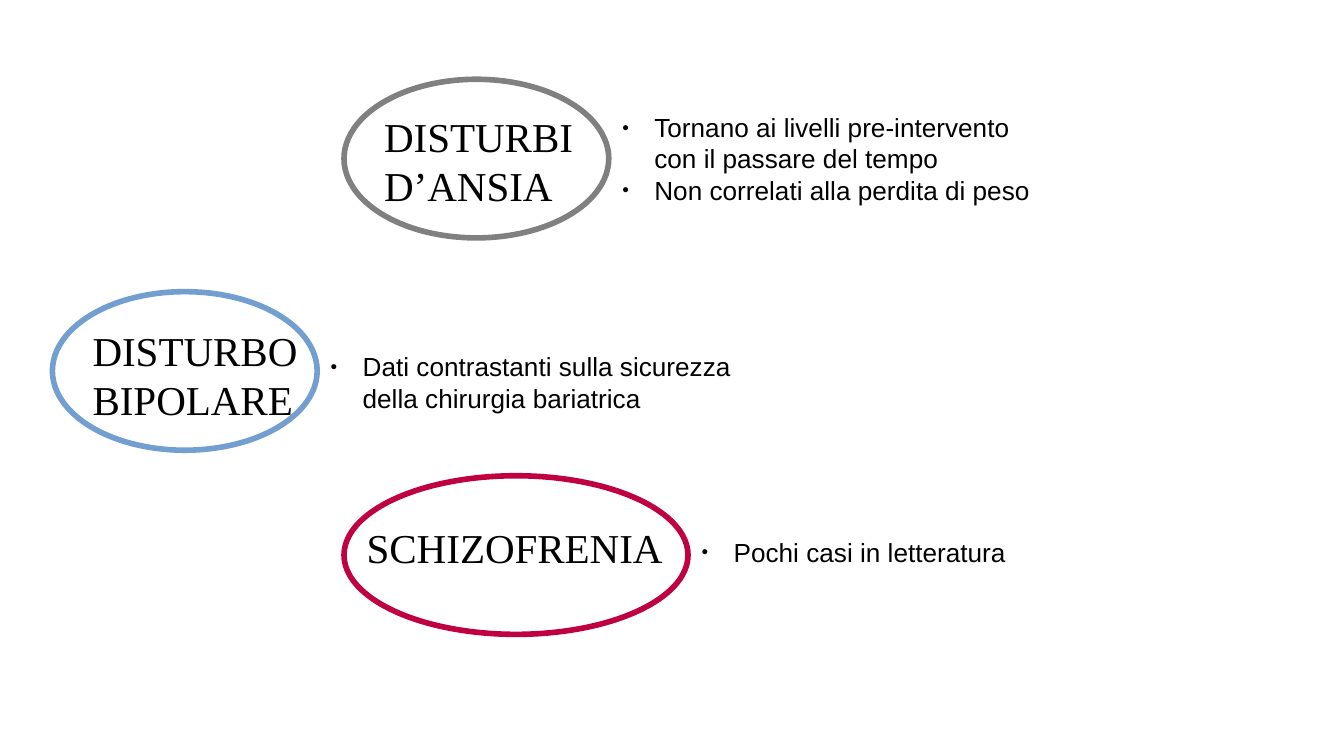
from lxml import etree
from pptx import Presentation
from pptx.dml.color import RGBColor
from pptx.enum.shapes import MSO_SHAPE
from pptx.oxml.ns import qn
from pptx.util import Inches, Pt

ELLIPSE = MSO_SHAPE.OVAL
COLORS = {"text": "000000", "anxiety": "808080", "bipolar": "729FCF", "schizophrenia": "BF0041"}
OVAL_H, LABEL_H = 1.18, 0.77
NOTES_W, NOTES_H = 3.35, 1.19
BULLET_INDENT = Inches(0.24)

# oval box (left, top, width), label offset and width, notes offset, colour, label, notes
DISORDERS = [
    ((2.56, 0.59, 1.97), (0.2, 0.19, 2.31), 0.19, "anxiety", ["DISTURBI D’ANSIA"],
     ["Tornano ai livelli pre-intervento con il passare del tempo",
      "Non correlati alla perdita di peso"]),
    ((0.39, 2.17, 1.97), (0.2, 0.2, 2.31), 0.39, "bipolar", ["DISTURBO", "BIPOLARE"],
     ["Dati contrastanti sulla sicurezza della chirurgia bariatrica"]),
    ((2.56, 3.54, 2.56), (0.07, 0.3, 2.56), 0.4, "schizophrenia", ["SCHIZOFRENIA"],
     ["Pochi casi in letteratura"]),
]


def add_bullet(p):
    pPr = p._p.get_or_add_pPr()
    pPr.set("marL", str(BULLET_INDENT))
    pPr.set("indent", str(-BULLET_INDENT))
    color = etree.SubElement(pPr, qn("a:buClr"))
    etree.SubElement(color, qn("a:srgbClr"), val=COLORS["text"])
    etree.SubElement(pPr, qn("a:buSzPct"), val="45000")
    etree.SubElement(pPr, qn("a:buFont"), typeface="Arial")
    etree.SubElement(pPr, qn("a:buChar"), char="●")


def add_text(s, box, lines, font, size, bullets=False):
    tf = s.shapes.add_textbox(*map(Inches, box)).text_frame
    tf.word_wrap = True
    for i, line in enumerate(lines):
        p = tf.add_paragraph() if i else tf.paragraphs[0]
        p.text = line
        if bullets:
            add_bullet(p)
        r = p.runs[0]
        r.font.name = font
        r.font.size = Pt(size)
        r.font.color.rgb = RGBColor.from_string(COLORS["text"])


def add_disorder(s, oval_box, label_box, notes_dy, color, label, notes):
    """Draw an outlined oval with its label and the notes at its right edge."""
    left, top, width = oval_box
    dx, dy, label_w = label_box
    sp = s.shapes.add_shape(ELLIPSE, *map(Inches, (left, top, width, OVAL_H)))
    sp.shadow.inherit = False
    sp.fill.background()
    sp.line.color.rgb = RGBColor.from_string(COLORS[color])
    sp.line.width = Pt(3)
    add_text(s, (left + dx, top + dy, label_w, LABEL_H), label, "Times New Roman", 22)
    add_text(s, (left + width, top + notes_dy, NOTES_W, NOTES_H), notes, "Arial", 14, bullets=True)


def main():
    prs = Presentation()
    prs.slide_width = Inches(10)
    prs.slide_height = prs.slide_width * 9 // 16
    s = prs.slides.add_slide(prs.slide_layouts[6])
    for disorder in DISORDERS:
        add_disorder(s, *disorder)
    prs.save("out.pptx")


if __name__ == "__main__":
    main()
